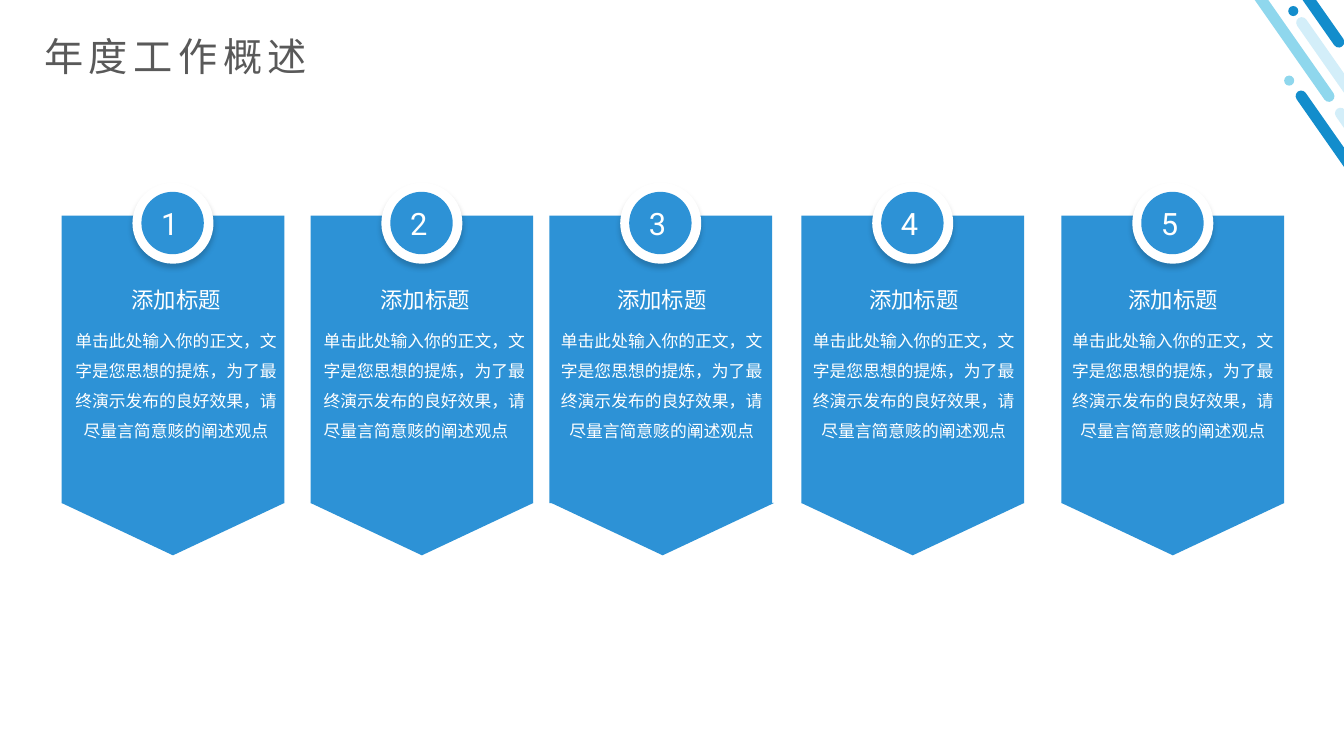
from dataclasses import dataclass

from lxml.etree import SubElement
from pptx import Presentation
from pptx.dml.color import RGBColor as RGB
from pptx.enum.shapes import MSO_SHAPE as Kind
from pptx.enum.text import PP_ALIGN as Align
from pptx.oxml.ns import qn
from pptx.util import Pt


@dataclass(frozen=True)
class Theme:
    blue: str = "2D92D6"
    deep: str = "138DCC"
    sky: str = "8FD7ED"
    pale: str = "D3EEF9"
    white: str = "FFFFFF"
    gray: str = "595959"
    han: str = "Noto Sans CJK SC"
    latin: str = "Roboto"
    title: int = 28
    number: int = 22
    head: int = 16
    body: int = 12


look = Theme()
BODY = "单击此处输入你的正文，文字是您思想的提炼，为了最终演示发布的良好效果，请尽量言简意赅的阐述观点"


def shape(slide, kind, box, fill):
    item = slide.shapes.add_shape(kind, *map(Pt, box))
    item.shadow.inherit = False
    item.fill.solid()
    item.fill.fore_color.rgb = RGB.from_string(fill)
    item.line.fill.background()
    return item


def label(slide, box, text, size, font, color=look.white, align=Align.LEFT):
    frame = slide.shapes.add_textbox(*map(Pt, box)).text_frame
    frame.word_wrap = True
    frame.text = text
    para = frame.paragraphs[0]
    para.alignment = align
    run = para.runs[0]
    run.font.size = Pt(size)
    run.font.name = font
    run.font.color.rgb = RGB.from_string(color)
    SubElement(run.font._element, qn("a:ea"), typeface=font)
    return para


def cast(item):
    """Add a soft shadow straight below the shape."""
    effects = item._element.spPr.find(qn("a:effectLst"))
    shade = SubElement(effects, qn("a:outerShdw"), blurRad=str(Pt(4)),
                       dist=str(Pt(3)), dir="5400000", rotWithShape="0")
    black = SubElement(shade, qn("a:srgbClr"), val="000000")
    SubElement(black, qn("a:alpha"), val="18000")


def corner(slide, left, top):
    # Slanted bars: x, y, length, colour
    for x, y, size, color in (
        (78.4, 51.1, 157.7, look.deep),
        (106.5, 63.4, 157.7, look.pale),
        (0.6, -108.7, 198.7, look.sky),
        (90.6, -5, 198.7, look.pale),
        (19.4, -110.2, 157.7, look.deep),
    ):
        bar = shape(slide, Kind.ROUNDED_RECTANGLE,
                    (left + x, top + y, 7.9, size), color)
        bar.adjustments[0] = 0.5
        bar.rotation = 325
    # Dots
    for x, y, color in ((27.3, 54, look.sky), (30.2, 4.3, look.deep)):
        shape(slide, Kind.OVAL, (left + x, top + y, 7.2, 7.2), color)


def card(slide, box, number, shift, tip, align):
    left, top, width, height = box
    # Banner with pointed foot
    foot = 37.4
    rise = 23
    base = top + height - foot
    shape(slide, Kind.RECTANGLE,
          (left, top + rise, width, base - top - rise), look.blue)
    point = shape(slide, Kind.ISOSCELES_TRIANGLE,
                  (left + tip, base, width, foot), look.blue)
    point._element.spPr.xfrm.set("flipV", "1")

    # Numbered badge
    ring = shape(slide, Kind.OVAL, (left + 51.1, top, 56.9, 56.9), look.white)
    ring.line.color.rgb = RGB.from_string(look.white)
    ring.line.width = Pt(1)
    cast(ring)
    shape(slide, Kind.OVAL, (left + 57, top + 6, 44.6, 44.6), look.blue)
    label(slide, (left + 64, top + 11.5, 41.8, 33.8), str(number),
          look.number, look.latin)

    # Body and heading
    inner = left + shift
    para = label(slide, (inner, top + 94.3, width, 107.3), BODY,
                 look.body, look.han, align=align)
    para.line_spacing = 1.5
    para.space_before = Pt(13.3)
    label(slide, (inner + 20, top + 69.8, 119.5, 26.6), "添加标题",
          look.head, look.han, align=Align.CENTER)


def main():
    deck = Presentation()
    deck.slide_width, deck.slide_height = Pt(960), Pt(540)
    slide = deck.slides.add_slide(deck.slide_layouts[6])
    corner(slide, 890, 0)

    # Title
    para = label(slide, (24.5, 19.4, 937.4, 41), "年度工作概述",
                 look.title, look.han, look.gray)
    para.runs[0].font._element.set("spc", "400")

    # Cards: left, text shift, tip shift, body alignment
    mid = Align.CENTER
    rows = (
        (44, 2.2, 0, mid),
        (221.8, 2.2, 0, Align.LEFT),
        (392.4, 0.7, 1.4, mid),
        (572.4, 0.7, 0, mid),
        (758.2, 0, 0, mid),
    )
    for number, (left, shift, tip, align) in enumerate(rows, 1):
        card(slide, (left, 131, 159.1, 265.7), number, shift, tip, align)
    deck.save("out.pptx")


if __name__ == "__main__":
    main()
